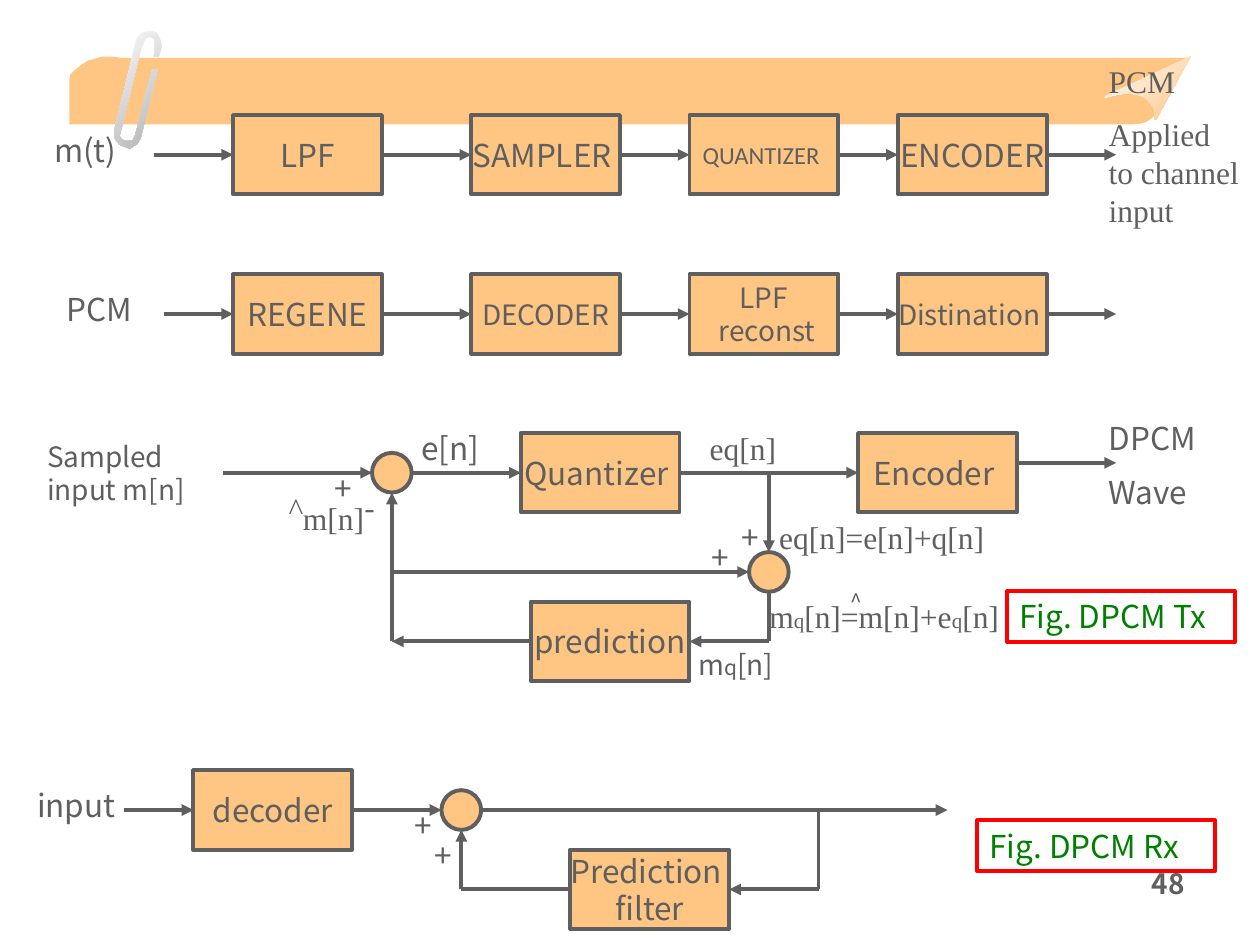
"""Build a slide of PCM and DPCM transmitter and receiver block diagrams."""
import pptx
import pptx.dml.color
import pptx.enum.shapes
import pptx.enum.text
import pptx.oxml
import pptx.oxml.ns
import pptx.util

Cm, Pt = pptx.util.Cm, pptx.util.Pt
RGBColor = pptx.dml.color.RGBColor
MSO_SHAPE = pptx.enum.shapes.MSO_SHAPE
PP_ALIGN = pptx.enum.text.PP_ALIGN
MSO_ANCHOR = pptx.enum.text.MSO_ANCHOR

ORANGE = RGBColor(0xFF, 0xC5, 0x83)
GRAY = RGBColor(0x5F, 0x5F, 0x5F)
RED = RGBColor(0xFF, 0x00, 0x00)
GREEN = RGBColor(0x00, 0x80, 0x00)
WHITE = RGBColor(0xFF, 0xFF, 0xFF)
SILVER = RGBColor(0xFC, 0xFC, 0xFC)
STEEL = RGBColor(0xB2, 0xB2, 0xB2)
SANS, SERIF, CALIBRI = "Noto Sans CJK KR", "Times New Roman", "Calibri"

BLOCK_H, BLOCK_W, WIDE_W, NODE_D = 1.6, 3, 3.2, 0.8
COLUMNS = [4.7, 9.5, 13.9, 18.1]
OUT_X = 22.5
ROWS = [
    (3.12, 3.1, [("LPF", 18, SANS), ("SAMPLER ", 18, SANS),
                 ("QUANTIZER ", 14, CALIBRI), ("ENCODER", 18, SANS)]),
    (6.33, 3.3, [("REGENE", 18, SANS), ("DECODER", 16, SANS),
                 ("LPF\n reconst", 16, SANS), ("Distination ", 16, SANS)]),
]
WIDE_BLOCKS = [
    (10.5, 9.53, "Quantizer "), (17.3, 9.53, "Encoder "), (10.7, 12.93, "prediction"),
    (3.9, 16.33, "decoder"), (11.5, 17.93, "Prediction \nfilter"),
]
NODES = [(7.9, 9.53), (15.5, 11.53), (9.3, 16.33)]
ARROWS = [
    (4.5, 9.53, 7.5, 9.53), (8.3, 9.53, 10.5, 9.53), (13.7, 9.53, 17.3, 9.53),
    (20.5, 9.33, OUT_X, 9.33), (10.7, 12.93, 7.9, 12.93), (7.9, 12.93, 7.9, 9.93),
    (7.9, 11.53, 15.1, 11.53), (15.5, 9.53, 15.5, 11.13), (15.5, 12.93, 13.9, 12.93),
    (2.5, 16.33, 3.9, 16.33), (7.1, 16.33, 8.9, 16.33), (9.7, 16.33, 19.1, 16.33),
    (16.5, 17.93, 14.7, 17.93), (9.3, 17.93, 9.3, 16.73),
]
WIRES = [(15.5, 11.93, 15.5, 12.93), (16.5, 16.33, 16.5, 17.93), (11.5, 17.93, 9.3, 17.93)]
LABELS = [
    (0.7, 2.52, 2, " m(t)", 18, SANS),
    (22.1, 1.12, 3.3, "PCM\nApplied\vto channel input", 18, SERIF),
    (1.1, 5.72, 2, "PCM", 18, SANS),
    (0.5, 15.73, 2.6, "input", 18, SANS),
    (0.7, 8.73, 3.6, "Sampled\vinput m[n]", 16, SANS),
    (22.1, 8.33, 3.2, "DPCM\nWave", 18, SANS),
    (7.1, 9.73, 0.8, "-", 18, SANS),
    (13.9, 8.53, 2.4, " eq[n]", 18, SERIF),
    (8.1, 8.53, 2.4, " e[n]", 18, SANS),
    (5.7, 9.93, 2, " m[n]", 18, SERIF),
    (5.57, 9.73, 1.2, "^", 18, SERIF),
    (13.7, 12.93, 2.4, " m|q|[n]", 16, SANS),
    (15.1, 11.92, 5.4, " m|q|[n]=m[n]+e|q|[n]", 18, SERIF),
    (16.9, 11.73, 1.2, "^", 12, SANS),
    (15.3, 10.32, 5.2, " eq[n]=e[n]+q[n]", 18, SERIF),
]
PLUSES = [(8.5, 16.73), (8.1, 16.13), (6.5, 9.33), (14.1, 10.73), (14.7, 10.32)]
FIGURES = [(20.3, 11.92, 4.6, "Fig. DPCM Tx"), (19.7, 16.54, 4.8, "Fig. DPCM Rx")]

RIBBON = [(1.4, 2.51), (22.83, 2.51), (23.01, 2.49), (23.11, 2.51), (23.32, 2.29),
          (23.98, 1.17), (2.46, 1.17), (2.26, 1.14), (2.06, 1.14), (1.9, 1.19),
          (1.78, 1.22), (1.65, 1.3), (1.5, 1.42), (1.42, 1.5), (1.4, 1.6)]
CURL = [(24, 1.14), (23.32, 2.39), (23.16, 2.51), (23.44, 2.24), (23.09, 1.98),
        (22.73, 1.73), (22.12, 2.08), (22.3, 1.93)]
CLIP = [(3.07, 1.4), (3.18, 1.4), (2.84, 2.77), (2.82, 2.82), (2.77, 2.9), (2.69, 2.95),
        (2.62, 3), (2.49, 2.95), (2.41, 2.92), (2.31, 2.79), (2.31, 2.59), (2.74, 0.84),
        (2.77, 0.76), (2.82, 0.71), (2.87, 0.66), (2.95, 0.64), (3.1, 0.64), (3.15, 0.66),
        (3.2, 0.74), (3.23, 0.81), (3.25, 0.89), (3.25, 0.97), (3.2, 1.14), (3.1, 1.14),
        (3.12, 0.99), (3.12, 0.79), (3.07, 0.76), (3, 0.74), (2.92, 0.79), (2.9, 0.84),
        (2.84, 0.99), (2.44, 2.64), (2.41, 2.74), (2.44, 2.79), (2.51, 2.84), (2.67, 2.84),
        (2.72, 2.74), (2.74, 2.67)]


def bezier(a, b, c, d, steps=8):
    """Return the points after a along a cubic curve."""
    ts = [i / steps for i in range(1, steps + 1)]
    return [tuple((1 - t) ** 3 * p + 3 * t * (1 - t) ** 2 * q + 3 * t * t * (1 - t) * u + t ** 3 * v
                  for p, q, u, v in zip(a, b, c, d)) for t in ts]


def add_outline(s, pts):
    """Add a closed borderless freeform."""
    pts = [(Cm(x), Cm(y)) for x, y in pts]
    fb = s.shapes.build_freeform(*pts[0])
    fb.add_line_segments(pts[1:], close=True)
    sp = fb.convert_to_shape()
    sp.shadow.inherit = False
    sp.line.fill.background()
    return sp


def set_gradient(sp, colors):
    """Fill a shape with a diagonal two-colour gradient."""
    sp.fill.gradient()
    sp.fill.gradient_angle = 315
    for stop, color in zip(sp.fill.gradient_stops, colors):
        stop.color.rgb = color


def add_banner(s):
    """Draw the ribbon, its curled end and the paper clip."""
    sp = add_outline(s, RIBBON[:2] + bezier(*RIBBON[1:5]) + RIBBON[5:])
    sp.fill.solid()
    sp.fill.fore_color.rgb = ORANGE
    sp = add_outline(s, CURL[:2] + bezier(*CURL[1:5]) + bezier(*CURL[4:8]))
    set_gradient(sp, (WHITE, ORANGE))
    set_gradient(add_outline(s, CLIP), (SILVER, STEEL))


def write(sp, text, size, font=SANS, color=GRAY, align=PP_ALIGN.LEFT, gap=0.5, bold=False):
    """Write one paragraph per line; parts between bars are small."""
    tf = sp.text_frame
    for i, line in enumerate(text.split("\n")):
        p = tf.add_paragraph() if i else tf.paragraphs[0]
        if "|" in line:
            for j, part in enumerate(line.split("|")):
                r = p.add_run()
                r.text = part
                r.font.size = Pt(12 if j % 2 else size)
        else:
            p.text = line
        p.alignment = align
        if i:
            p.space_before = Pt(size * gap)
        p.font.size, p.font.name, p.font.bold = Pt(size), font, bold
        p.font.color.rgb = color


def add_label(s, x, y, w, text, size, font=SANS, **style):
    """Add a wrapped text box."""
    sp = s.shapes.add_textbox(Cm(x), Cm(y), Cm(w), Cm(1))
    sp.text_frame.word_wrap = True
    write(sp, text, size, font, **style)


def add_box(s, kind, x, y, w, h, line=GRAY, fill=ORANGE):
    """Add an outlined preset shape."""
    sp = s.shapes.add_shape(kind, Cm(x), Cm(y), Cm(w), Cm(h))
    sp.shadow.inherit = False
    if fill is None:
        sp.fill.background()
    else:
        sp.fill.solid()
        sp.fill.fore_color.rgb = fill
    sp.line.color.rgb = line
    sp.line.width = Pt(2.25)
    return sp


def add_block(s, x, cy, w, text, size=18, font=SANS):
    """Add a process block centred on height cy."""
    sp = add_box(s, MSO_SHAPE.RECTANGLE, x, cy - BLOCK_H / 2, w, BLOCK_H)
    sp.text_frame.word_wrap = False
    sp.text_frame.vertical_anchor = MSO_ANCHOR.MIDDLE
    write(sp, text, size, font, align=PP_ALIGN.CENTER, gap=0)


def add_figure_title(s, x, y, w, text):
    """Add a green caption in a red frame."""
    sp = add_box(s, MSO_SHAPE.RECTANGLE, x, y, w, 1.02, RED, None)
    sp.text_frame.word_wrap = True
    sp.text_frame.vertical_anchor = MSO_ANCHOR.TOP
    write(sp, text, 18, color=GREEN)


def add_wire(s, x1, y1, x2, y2, arrow=True):
    """Add a straight connector, with an arrowhead unless told otherwise."""
    sp = s.shapes.add_connector(pptx.enum.shapes.MSO_CONNECTOR.STRAIGHT,
                                Cm(x1), Cm(y1), Cm(x2), Cm(y2))
    sp.line.color.rgb = GRAY
    sp.line.width = Pt(2.25)
    if arrow:
        ln = sp.line._get_or_add_ln()
        ln.append(pptx.oxml.parse_xml(
            '<a:tailEnd %s type="triangle"/>' % pptx.oxml.ns.nsdecls("a")))
    sp._element.spPr.append(pptx.oxml.parse_xml(
        "<a:effectLst %s/>" % pptx.oxml.ns.nsdecls("a")))


def add_chain(s, cy, start, blocks):
    """Add a row of blocks joined by arrows."""
    for x, (text, size, font) in zip(COLUMNS, blocks):
        add_block(s, x, cy, BLOCK_W, text, size, font)
    for x1, x2 in zip([start] + [x + BLOCK_W for x in COLUMNS], COLUMNS + [OUT_X]):
        add_wire(s, x1, cy, x2, cy)


def main():
    """Build and save the slide."""
    prs = pptx.Presentation()
    prs.slide_width, prs.slide_height = Cm(25.4), Cm(19.05)
    s = prs.slides.add_slide(prs.slide_layouts[6])
    add_banner(s)
    for row in ROWS:
        add_chain(s, *row)
    for x, cy, text in WIDE_BLOCKS:
        add_block(s, x, cy, WIDE_W, text)
    for cx, cy in NODES:
        add_box(s, MSO_SHAPE.OVAL, cx - NODE_D / 2, cy - NODE_D / 2, NODE_D, NODE_D)
    for ends in ARROWS:
        add_wire(s, *ends)
    for ends in WIRES:
        add_wire(s, *ends, arrow=False)
    for label in LABELS:
        add_label(s, *label)
    for x, y in PLUSES:
        add_label(s, x, y, 0.8, "+", 18)
    for figure in FIGURES:
        add_figure_title(s, *figure)
    add_label(s, 18.2, 17.35, 5.93, "48", 16, align=PP_ALIGN.RIGHT, bold=True)
    prs.save("out.pptx")


if __name__ == "__main__":
    main()
